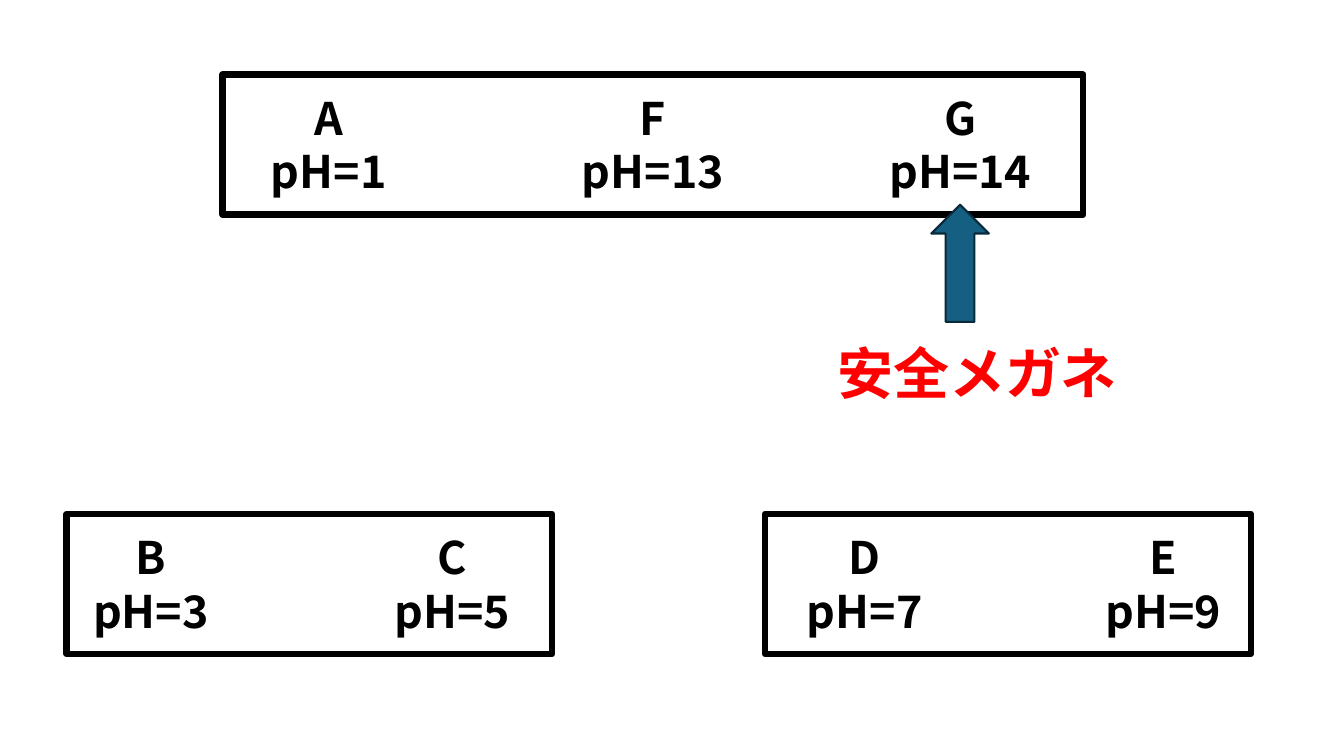
from lxml.etree import SubElement
from pptx import Presentation
from pptx.dml.color import RGBColor
from pptx.enum.shapes import MSO_SHAPE as Shape
from pptx.enum.text import MSO_AUTO_SIZE as Fit, PP_ALIGN as Align
from pptx.oxml.ns import qn
from pptx.util import Cm, Pt

BLACK = RGBColor(0x00, 0x00, 0x00)
RED = RGBColor(0xFF, 0x00, 0x00)
TEAL = RGBColor(0x15, 0x60, 0x82)
NAVY = RGBColor(0x09, 0x2A, 0x39)
FONT = "Noto Sans CJK JP"
LEADING = 1.2

# Each group: left, top, width of its frame, then (left, letter, pH) per sample
GROUPS = [
    (5.61, 1.88, 21.69, [(6.05, "A", 1), (14.22, "F", 13), (21.97, "G", 14)]),
    (1.68, 12.95, 12.24, [(1.57, "B", 3), (9.17, "C", 5)]),
    (19.28, 12.95, 12.24, [(19.56, "D", 7), (27.08, "E", 9)]),
]
FRAME_H = 3.53
LABEL_W, LABEL_H = 4.47, 3.0
LABEL_DROP = 0.27


def add_form(slide, kind, box, fill, line, width):
    form = slide.shapes.add_shape(kind, *map(Cm, box))
    form.shadow.inherit = False
    if fill is None:
        form.fill.background()
    else:
        form.fill.solid()
        form.fill.fore_color.rgb = fill
    form.line.color.rgb = line
    form.line.width = Pt(width)


def style(run, size, color):
    """Format a run, with the font set for Latin and Japanese letters alike."""
    look = {"name": FONT, "size": Pt(size), "bold": True}
    for key, value in look.items():
        setattr(run.font, key, value)
    run.font.color.rgb = color
    SubElement(run.font._element, qn("a:ea"), typeface=FONT)


def add_text(slide, box, lines, size, color, align):
    frame = slide.shapes.add_textbox(*map(Cm, box)).text_frame
    frame.word_wrap = True
    frame.auto_size = Fit.SHAPE_TO_FIT_TEXT
    frame.text = "\n".join(lines)
    for para in frame.paragraphs:
        para.alignment = align
        para.line_spacing = Pt(size * LEADING)
        style(para.runs[0], size, color)


def main():
    deck = Presentation()
    deck.slide_width, deck.slide_height = Cm(33.87), Cm(19.05)
    slide = deck.slides.add_slide(deck.slide_layouts[6])

    for left, top, width, _ in GROUPS:
        add_form(slide, Shape.RECTANGLE, (left, top, width, FRAME_H),
                 None, BLACK, 4.5)
    for _, top, _, samples in GROUPS:
        for left, letter, value in samples:
            box = (left, top + LABEL_DROP, LABEL_W, LABEL_H)
            add_text(slide, box, [letter, f"pH={value}"], 32, BLACK, Align.CENTER)

    add_form(slide, Shape.UP_ARROW, (23.47, 5.16, 1.45, 2.95), TEAL, NAVY, 1.5)
    add_text(slide, (20.85, 8.41, 8.18, 1.96), ["安全メガネ"], 40, RED, Align.LEFT)

    deck.save("out.pptx")


if __name__ == "__main__":
    main()
